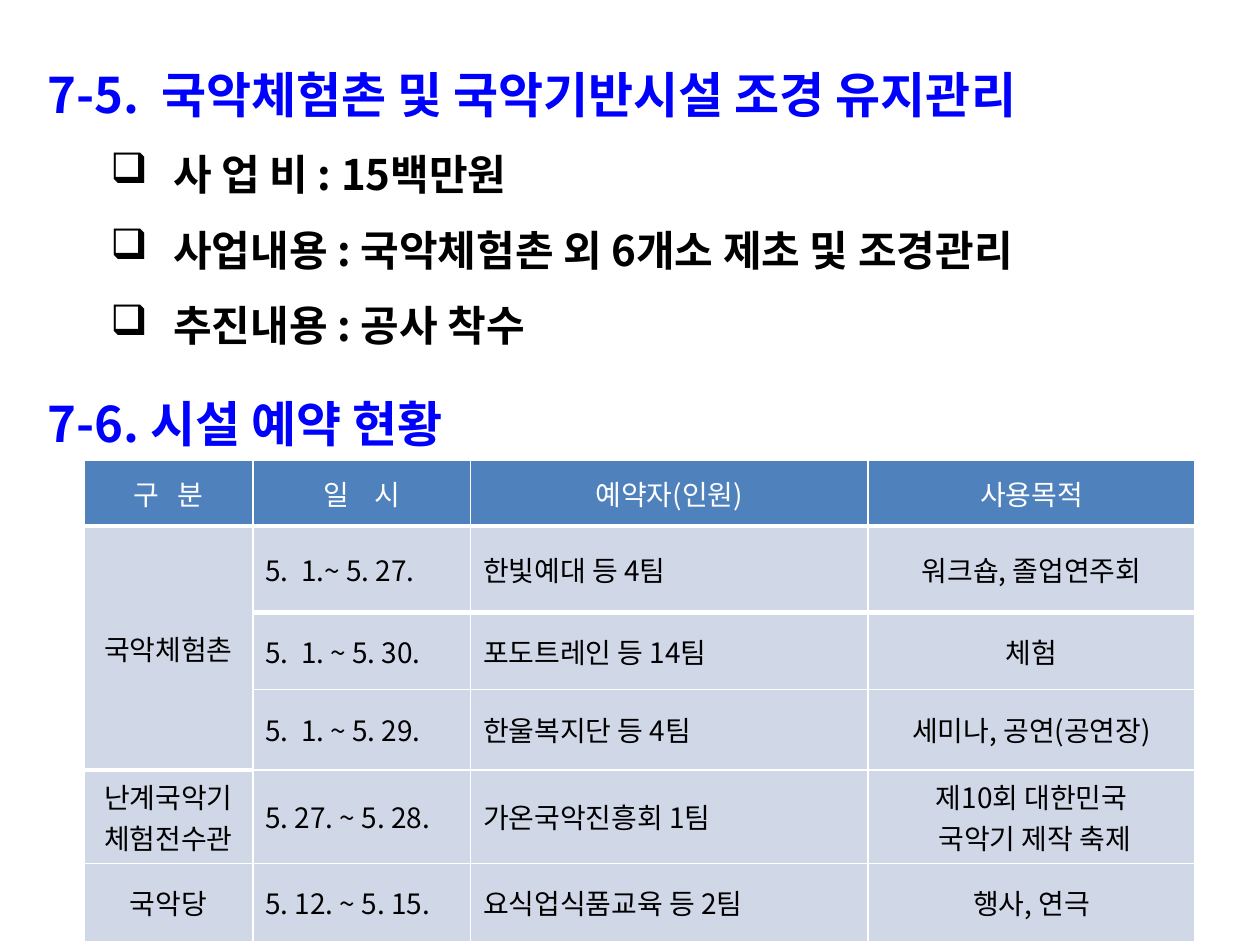
from lxml import etree
from pptx import Presentation
from pptx.dml.color import RGBColor
from pptx.enum.text import MSO_ANCHOR, PP_ALIGN
from pptx.oxml.ns import qn
from pptx.util import Pt

MID = MSO_ANCHOR.MIDDLE
LEFT, CENTER = PP_ALIGN.LEFT, PP_ALIGN.CENTER
FONT = "Noto Sans CJK KR"
BLUE, BLACK, WHITE = "0000FF", "000000", "FFFFFF"
HEAD, BODY = "4F81BD", "D0D8E8"

WORKS = "7-5.  국악체험촌 및 국악기반시설 조경 유지관리"
ITEMS = [
    "사 업 비 : 15백만원",
    "사업내용 : 국악체험촌 외 6개소 제초 및 조경관리",
    "추진내용 : 공사 착수",
]
USAGE = "7-6. 시설 예약 현황"
ROWS = [
    ("구   분", "일    시", "예약자(인원)", "사용목적"),
    ("국악체험촌", "5.  1.~ 5. 27.", "한빛예대 등 4팀", "워크숍, 졸업연주회"),
    ("", "5.  1. ~ 5. 30.", "포도트레인 등 14팀", "체험"),
    ("", "5.  1. ~ 5. 29.", "한울복지단 등 4팀", "세미나, 공연(공연장)"),
    ("난계국악기체험전수관", "5. 27. ~ 5. 28.", "가온국악진흥회 1팀",
     "제10회 대한민국\n 국악기 제작 축제"),
    ("국악당", "5. 12. ~ 5. 15.", "요식업식품교육 등 2팀", "행사, 연극"),
]
WIDTHS = [96.5, 124.5, 227, 187]
HEIGHTS = [37.5, 49.5, 44, 46, 53.5, 44.5]
ALIGNS = [CENTER, LEFT, LEFT, CENTER]


def tint(hue):
    return RGBColor.from_string(hue)


def style(para, size, hue, bold=False):
    for run in para.runs:
        font = run.font
        font.name, font.size, font.bold = FONT, Pt(size), bold
        font.color.rgb = tint(hue)
        east = etree.SubElement(run._r.get_or_add_rPr(), qn("a:ea"))
        east.set("typeface", FONT)


def indent(para, left, hang, mark=None):
    props = para._p.get_or_add_pPr()
    props.set("marL", str(Pt(left)))
    props.set("indent", str(-Pt(hang)))
    if mark:
        shade = etree.SubElement(props, qn("a:buClr"))
        etree.SubElement(shade, qn("a:srgbClr")).set("val", BLACK)
        etree.SubElement(props, qn("a:buChar")).set("char", mark)


def add_list(slide, box, title, items=()):
    frame = slide.shapes.add_textbox(*map(Pt, box)).text_frame
    frame.word_wrap = True
    frame.text = "\n".join([title, *items])
    first, *rest = frame.paragraphs
    first.line_spacing = 1.4
    indent(first, 42, 42)
    style(first, 28, BLUE, True)
    for para in rest:
        para.level = 1
        para.line_spacing = 1.5
        indent(para, 72, 36, "❑")
        style(para, 24, BLACK, True)


def add_edge(cell, side, width):
    props = cell._tc.get_or_add_tcPr()
    line = etree.Element(qn(f"a:{side}"), w=str(Pt(width)))
    fill = etree.SubElement(line, qn("a:solidFill"))
    etree.SubElement(fill, qn("a:srgbClr")).set("val", WHITE)
    props.insert(0, line)


def add_grid(slide, left, top):
    size = map(Pt, (left, top, sum(WIDTHS), sum(HEIGHTS)))
    grid = slide.shapes.add_table(len(ROWS), len(WIDTHS), *size).table
    grid.horz_banding = False
    for col, width in zip(grid.columns, WIDTHS):
        col.width = Pt(width)
    for r, (texts, height) in enumerate(zip(ROWS, HEIGHTS)):
        grid.rows[r].height = Pt(height)
        for c, text in enumerate(texts):
            cell = grid.cell(r, c)
            cell.fill.solid()
            cell.fill.fore_color.rgb = tint(BODY if r else HEAD)
            cell.vertical_anchor = MID
            cell.text_frame.text = text
            for para in cell.text_frame.paragraphs:
                para.alignment = ALIGNS[c] if r else CENTER
                style(para, 16, BLACK if r else WHITE)
            if r < 2:
                add_edge(cell, "lnT" if r else "lnB", 3)
    grid.cell(1, 0).merge(grid.cell(3, 0))


def main():
    deck = Presentation()
    deck.slide_width, deck.slide_height = Pt(720), Pt(540)
    slide = deck.slides.add_slide(deck.slide_layouts[6])
    add_list(slide, (20, 208, 612, 58), USAGE)
    add_grid(slide, 48, 263)
    add_list(slide, (20, 20, 692, 171), WORKS, ITEMS)
    deck.save("out.pptx")


if __name__ == "__main__":
    main()
